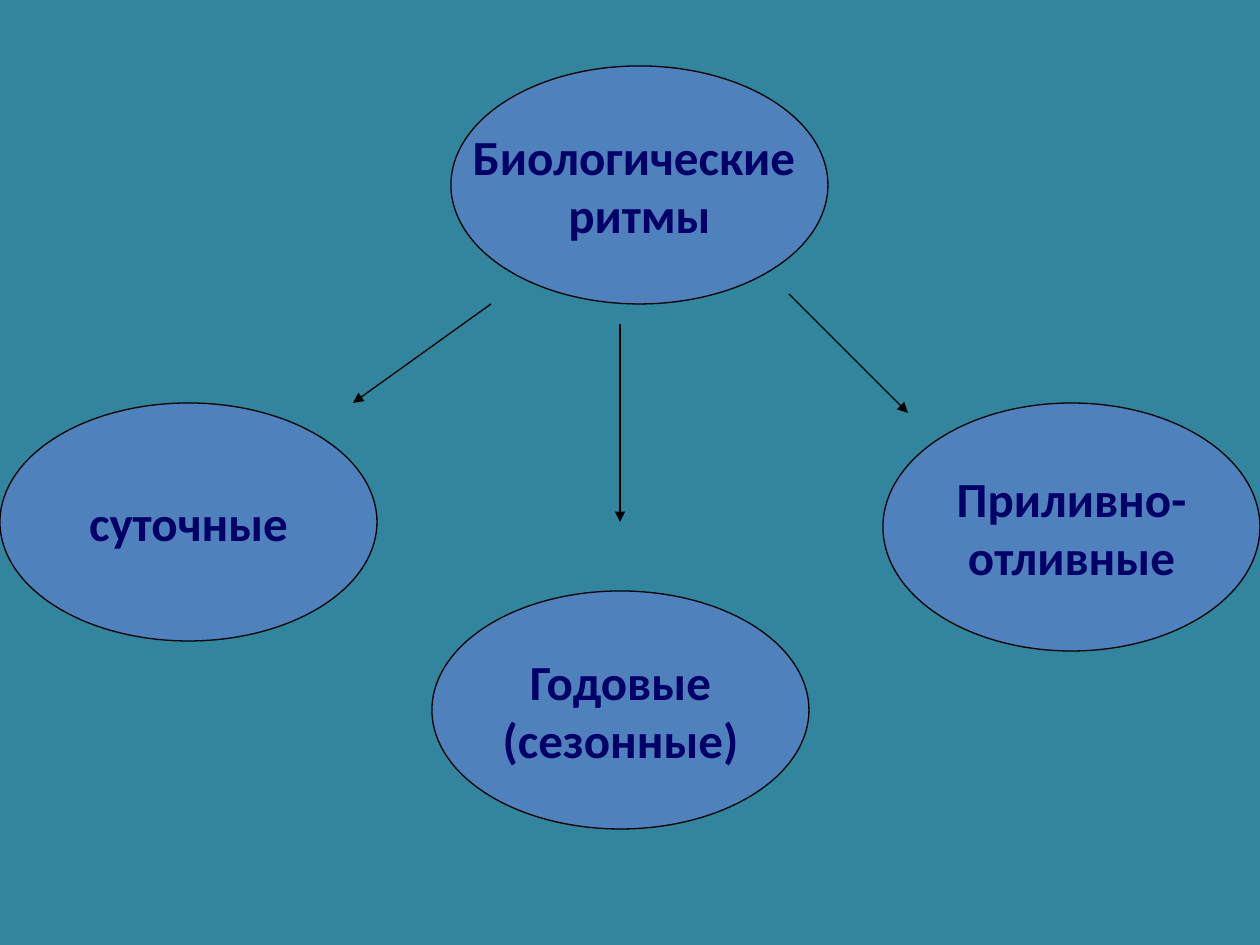
from dataclasses import dataclass

from lxml import etree
from pptx import Presentation
from pptx import util as u
from pptx.dml.color import RGBColor
from pptx.enum import shapes, text
from pptx.oxml import ns

EMU_PER_PX = u.Inches(1) // 126
PAGE_WIDTH, PAGE_HEIGHT = 1260, 945
OVAL_WIDTH, OVAL_HEIGHT = 377, 238


@dataclass(frozen=True)
class Theme:
    background: str = "31859C"
    oval: str = "4F81BD"
    outline: str = "000000"
    ink: str = "000066"
    font: str = "Calibri"
    text_size: int = 28
    line_width: float = 0.75


class RhythmSlide:
    def __init__(self, deck, theme):
        self.theme = theme
        self.page = deck.slides.add_slide(deck.slide_layouts[6])
        fill = self.page.background.fill
        fill.solid()
        fill.fore_color.rgb = RGBColor.from_string(theme.background)

    def px(self, *lengths):
        return [u.Emu(length * EMU_PER_PX) for length in lengths]

    def outline(self, line):
        line.color.rgb = RGBColor.from_string(self.theme.outline)
        line.width = u.Pt(self.theme.line_width)

    def oval(self, left, top, lines, height=OVAL_HEIGHT):
        box = self.page.shapes.add_shape(
            shapes.MSO_SHAPE.OVAL, *self.px(left, top, OVAL_WIDTH, height)
        )
        box.shadow.inherit = False
        box.fill.solid()
        box.fill.fore_color.rgb = RGBColor.from_string(self.theme.oval)
        self.outline(box.line)
        frame = box.text_frame
        frame.word_wrap = False
        frame.vertical_anchor = text.MSO_ANCHOR.MIDDLE
        for index, words in enumerate(lines):
            para = frame.add_paragraph() if index else frame.paragraphs[0]
            para.alignment = text.PP_ALIGN.CENTER
            span = para.add_run()
            span.text = words
            span.font.name = self.theme.font
            span.font.size = u.Pt(self.theme.text_size)
            span.font.bold = True
            span.font.color.rgb = RGBColor.from_string(self.theme.ink)

    def arrow(self, start, end):
        connector = self.page.shapes.add_connector(
            shapes.MSO_CONNECTOR.STRAIGHT, *self.px(*start, *end)
        )
        self.outline(connector.line)
        properties = connector.element.spPr
        line = properties.find(ns.qn("a:ln"))
        etree.SubElement(line, ns.qn("a:tailEnd"), type="triangle")
        etree.SubElement(properties, ns.qn("a:effectLst"))


def main():
    deck = Presentation()
    deck.slide_width = u.Emu(PAGE_WIDTH * EMU_PER_PX)
    deck.slide_height = u.Emu(PAGE_HEIGHT * EMU_PER_PX)
    slide = RhythmSlide(deck, Theme())

    slide.oval(451, 66, ["Биологические ", "ритмы"])
    slide.oval(PAGE_WIDTH - OVAL_WIDTH, 403, ["Приливно-", "отливные"], height=248)
    slide.oval(432, 591, ["Годовые", "(сезонные)"])
    slide.oval(0, 403, ["суточные"])

    slide.arrow((620, 324), (620, 522))
    slide.arrow((789, 294), (908, 413))
    slide.arrow((491, 304), (353, 403))

    deck.save("out.pptx")


if __name__ == "__main__":
    main()
